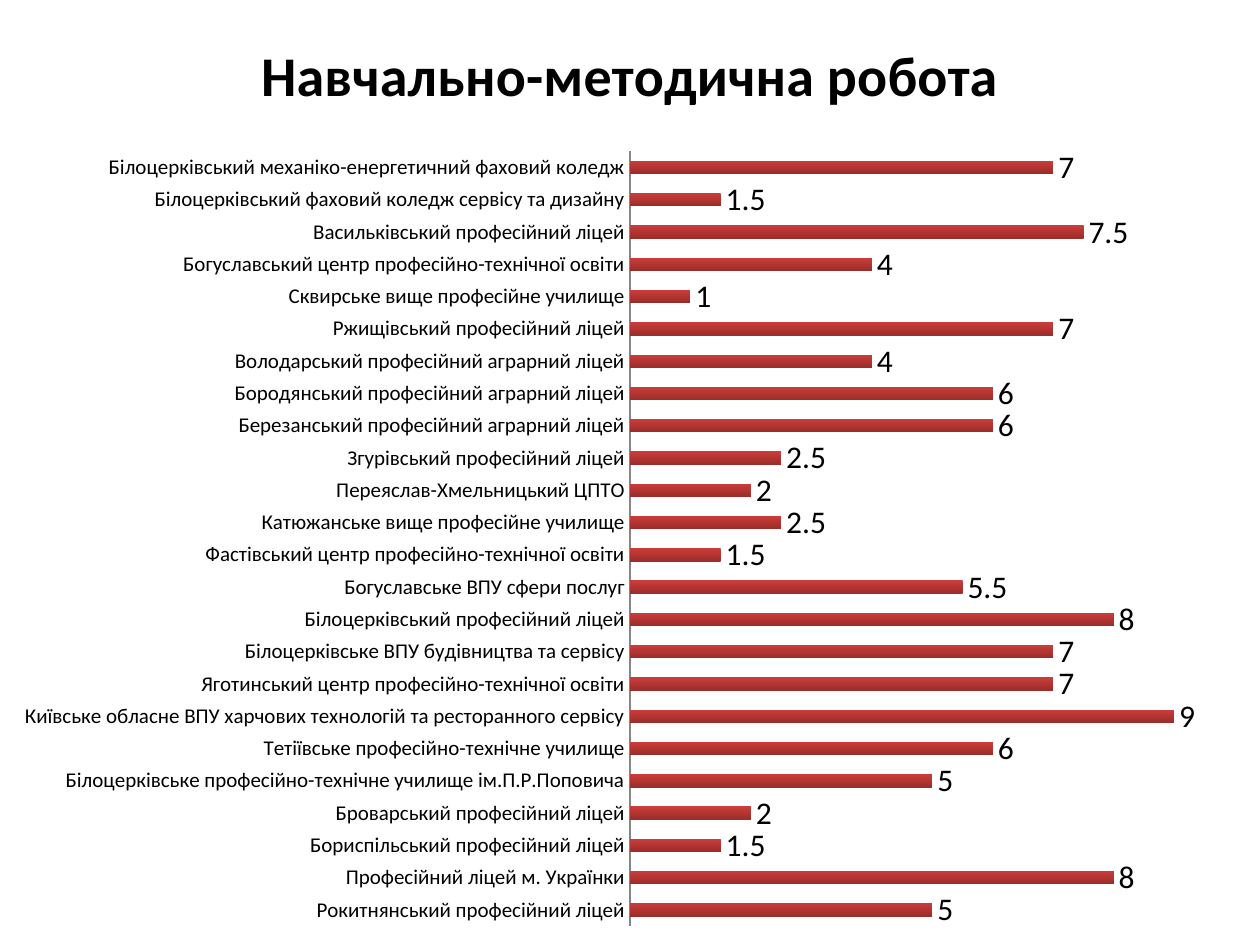
from dataclasses import dataclass

from lxml.etree import SubElement
from pptx import Presentation
from pptx.chart.data import CategoryChartData
from pptx.dml.color import RGBColor as Rgb
from pptx.enum.chart import XL_CHART_TYPE as ChartType
from pptx.enum.chart import XL_LABEL_POSITION as LabelPosition
from pptx.enum.chart import XL_TICK_MARK as TickMark
from pptx.oxml.ns import qn
from pptx.util import Inches, Pt

SCORES = [
    ("Рокитнянський професійний ліцей", 5),
    ("Професійний ліцей м. Українки", 8),
    ("Бориспільський професійний ліцей", 1.5),
    ("Броварський професійний ліцей", 2),
    ("Білоцерківське професійно-технічне училище ім.П.Р.Поповича", 5),
    ("Тетіївське професійно-технічне училище", 6),
    ("Київське обласне ВПУ харчових технологій та ресторанного сервісу", 9),
    ("Яготинський центр професійно-технічної освіти", 7),
    ("Білоцерківське ВПУ будівництва та сервісу", 7),
    ("Білоцерківський професійний ліцей", 8),
    ("Богуславське ВПУ сфери послуг", 5.5),
    ("Фастівський центр професійно-технічної освіти", 1.5),
    ("Катюжанське вище професійне училище", 2.5),
    ("Переяслав-Хмельницький ЦПТО", 2),
    ("Згурівський професійний ліцей", 2.5),
    ("Березанський професійний аграрний ліцей", 6),
    ("Бородянський професійний аграрний ліцей", 6),
    ("Володарський професійний аграрний ліцей", 4),
    ("Ржищівський професійний ліцей", 7),
    ("Сквирське вище професійне училище", 1),
    ("Богуславський центр професійно-технічної освіти", 4),
    ("Васильківський професійний ліцей", 7.5),
    ("Білоцерківський фаховий коледж сервісу та дизайну", 1.5),
    ("Білоцерківський механіко-енергетичний фаховий коледж", 7),
]


@dataclass(frozen=True)
class Theme:
    """Colours, font and type sizes of the slide."""
    font: str = "Calibri"
    text: Rgb = Rgb(0, 0, 0)
    axis: Rgb = Rgb(0x86, 0x86, 0x86)
    bar_top: Rgb = Rgb(0xCB, 0x3D, 0x3A)
    bar_bottom: Rgb = Rgb(0x9B, 0x2D, 0x2A)
    title_size: Pt = Pt(32)
    value_size: Pt = Pt(18)
    category_size: Pt = Pt(12)


class SlideBuilder:
    """Holds the theme and the current slide."""

    def __init__(self, slide, theme):
        self.slide = slide
        self.theme = theme

    def style(self, font, size, bold=False):
        """Apply the theme's typeface and text colour."""
        font.name = self.theme.font
        font.size = size
        font.bold = bold
        font.color.rgb = self.theme.text

    def bar_chart(self, scores, left, top, width, height):
        """Add a horizontal bar chart with labelled values."""
        ranking = CategoryChartData()
        ranking.categories = [school for school, _ in scores]
        ranking.add_series("Series 1", [score for _, score in scores])
        chart = self.slide.shapes.add_chart(
            ChartType.BAR_CLUSTERED, left, top, width, height, ranking
        ).chart
        chart.has_legend = False
        self.style(chart.font, self.theme.value_size)
        self.format_axes(chart)
        self.format_bars(chart.plots[0])
        return chart

    def format_axes(self, chart):
        """Show school names and hide the value scale."""
        schools, scale = chart.category_axis, chart.value_axis
        schools.major_tick_mark = schools.minor_tick_mark = TickMark.NONE
        schools.format.line.color.rgb = self.theme.axis
        schools.format.line.width = Pt(0.75)
        self.style(schools.tick_labels.font, self.theme.category_size)
        scale.minimum_scale, scale.maximum_scale = 0, 10
        scale.has_major_gridlines = False
        scale.visible = False

    def format_bars(self, plot):
        """Shade the bars and label their ends."""
        plot.gap_width, plot.overlap = 150, -25
        plot.vary_by_categories = False
        bars = plot.series[0]
        bars.invert_if_negative = False
        fill = bars.format.fill
        fill.gradient()
        fill.gradient_angle = 270
        for stop, color in zip(fill.gradient_stops, (self.theme.bar_top, self.theme.bar_bottom)):
            stop.color.rgb = color
        labels = bars.data_labels
        labels.show_value = True
        labels.position = LabelPosition.OUTSIDE_END
        self.style(labels.font, self.theme.value_size)

    def chart_title(self, chart, wording):
        """Write the heading above the bars."""
        chart.has_title = True
        chart.chart_title.include_in_layout = False
        run = chart.chart_title.text_frame.paragraphs[0].add_run()
        run.text = wording
        self.style(run.font, self.theme.title_size, bold=True)

    def plot_layout(self, chart, **fractions):
        """Place the inner plot area by fractions of the chart."""
        plot_area = chart.plots[0]._element.getparent()
        layout = plot_area.find(qn("c:layout"))
        if layout is None:
            layout = SubElement(plot_area, qn("c:layout"))
            plot_area.insert(0, layout)
        manual = SubElement(layout, qn("c:manualLayout"))
        settings = {"layoutTarget": "inner", "xMode": "edge", "yMode": "edge", **fractions}
        for tag, setting in settings.items():
            SubElement(manual, qn(f"c:{tag}")).set("val", str(setting))


def main():
    """Build and save the slide."""
    deck = Presentation()
    deck.slide_width, deck.slide_height = Inches(10), Inches(7.5)
    builder = SlideBuilder(deck.slides.add_slide(deck.slide_layouts[6]), Theme())
    chart = builder.bar_chart(SCORES, Inches(0), Inches(0), Inches(10), Inches(7.5))
    builder.chart_title(chart, "Навчально-методична робота")
    builder.plot_layout(chart, x=0.5, y=0.16, w=0.48, h=0.82)
    deck.save("out.pptx")


if __name__ == "__main__":
    main()
